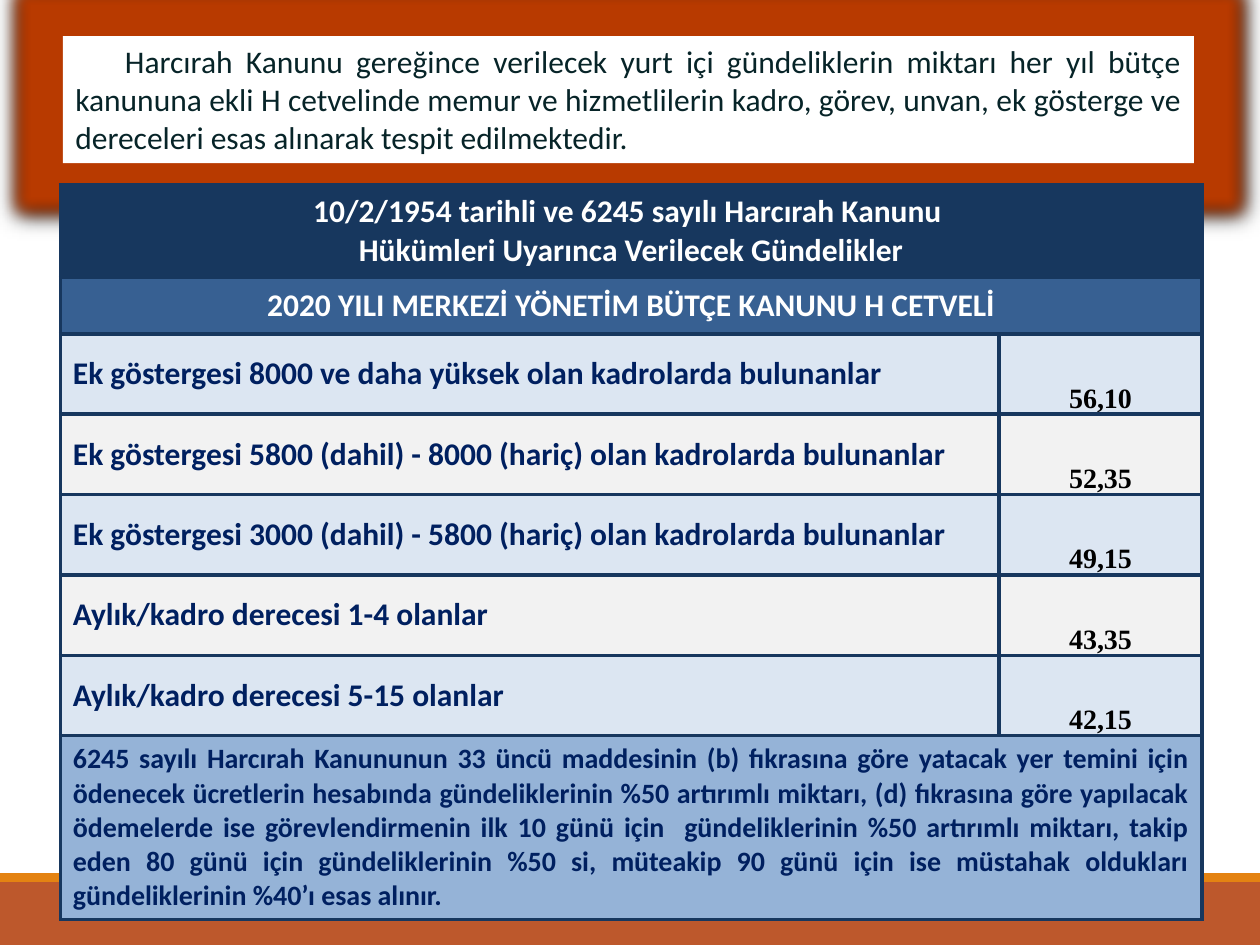
from dataclasses import dataclass

from lxml import etree
from pptx import Presentation
from pptx import util as u
from pptx.dml.color import RGBColor
from pptx.enum import shapes, text
from pptx.oxml.ns import qn

COLORS = {
    "white": "FFFFFF", "black": "000000", "ink": "072428", "text": "002060",
    "navy": "17375E", "blue": "376092", "pale": "DCE6F2", "grey": "F2F2F2",
    "note": "95B3D7", "rust": "BD582C", "orange": "E48312", "glow": "B83A00",
}
SANS, SERIF = "Calibri", "Times New Roman"
ALIGN, ANCHOR = text.PP_ALIGN, text.MSO_ANCHOR


@dataclass
class Style:
    color: str
    size: int = 18
    bold: bool = True
    font: str = SANS
    align: ALIGN = ALIGN.LEFT
    anchor: ANCHOR = ANCHOR.MIDDLE
    margins: tuple = (0.25, 0.13, 0.25, 0.13)  # left, top, right, bottom


@dataclass
class Row:
    height: float
    fill: str
    cells: list  # (wording, style); a single entry spans both columns


HEADING = Style("white", align=ALIGN.CENTER)
LABEL = Style("text")
AMOUNT = Style("black", 16, font=SERIF, align=ALIGN.CENTER,
               anchor=ANCHOR.BOTTOM, margins=(0.03, 0.03, 0.03, 0))
NOTE = Style("text", 16, align=ALIGN.JUSTIFY)
INTRO = Style("ink", bold=False, align=ALIGN.JUSTIFY)

INTRO_TEXT = (
    "Harcırah Kanunu gereğince verilecek yurt içi gündeliklerin miktarı her yıl "
    "bütçe kanununa ekli H cetvelinde memur ve hizmetlilerin kadro, görev, unvan, "
    "ek gösterge ve dereceleri esas alınarak tespit edilmektedir.")
NOTE_TEXT = (
    "6245 sayılı Harcırah Kanununun 33 üncü maddesinin (b) fıkrasına göre yatacak "
    "yer temini için ödenecek ücretlerin hesabında gündeliklerinin %50 artırımlı "
    "miktarı, (d) fıkrasına göre yapılacak ödemelerde ise görevlendirmenin ilk 10 "
    "günü için  gündeliklerinin %50 artırımlı miktarı, takip eden 80 günü için "
    "gündeliklerinin %50 si, müteakip 90 günü için ise müstahak oldukları "
    "gündeliklerinin %40’ı esas alınır.")
ALLOWANCES = [
    ("Ek göstergesi 8000 ve daha yüksek olan kadrolarda bulunanlar", "56,10"),
    ("Ek göstergesi 5800 (dahil) - 8000 (hariç) olan kadrolarda bulunanlar", "52,35"),
    ("Ek göstergesi 3000 (dahil) - 5800 (hariç) olan kadrolarda bulunanlar", "49,15"),
    ("Aylık/kadro derecesi 1-4 olanlar", "43,35"),
    ("Aylık/kadro derecesi 5-15 olanlar", "42,15"),
]
ROWS = [
    Row(1.86, "navy", [("10/2/1954 tarihli ve 6245 sayılı Harcırah Kanunu \v"
                        "Hükümleri Uyarınca Verilecek Gündelikler", HEADING)]),
    Row(1.14, "blue", [("2020 YILI MERKEZİ YÖNETİM BÜTÇE KANUNU H CETVELİ", HEADING)]),
    *[Row(1.62, ("pale", "grey")[i % 2], [(label, LABEL), (amount, AMOUNT)])
      for i, (label, amount) in enumerate(ALLOWANCES)],
    Row(3.63, "note", [(NOTE_TEXT, NOTE)]),
]
COLUMNS = (18.92, 4.09)


def rgb(name: str) -> RGBColor:
    return RGBColor.from_string(COLORS[name])


def add_element(parent, tag: str, **attrs):
    return etree.SubElement(parent, qn(tag), {k: str(v) for k, v in attrs.items()})


def write(tf, wording: str, style: Style) -> None:
    p = tf.paragraphs[0]
    p.text = wording
    p.alignment = style.align
    for r in p.runs:
        r.font.name, r.font.size, r.font.bold = style.font, u.Pt(style.size), style.bold
        r.font.color.rgb = rgb(style.color)


def add_rect(s, left: float, top: float, width: float, height: float, fill: str):
    sp = s.shapes.add_shape(shapes.MSO_SHAPE.RECTANGLE,
                            u.Cm(left), u.Cm(top), u.Cm(width), u.Cm(height))
    sp.shadow.inherit = False
    sp.fill.solid()
    sp.fill.fore_color.rgb = rgb(fill)
    sp.line.fill.background()
    return sp


def add_glow(sp) -> None:
    effects = sp._element.spPr.find(qn("a:effectLst"))
    glow = add_element(effects, "a:glow", rad=u.Pt(18))
    add_element(glow, "a:srgbClr", val=COLORS["glow"])
    shadow = add_element(effects, "a:outerShdw", blurRad=u.Pt(8.5), dist=u.Pt(1),
                         dir=5400000, algn="t", rotWithShape=0)
    add_element(shadow, "a:srgbClr", val=COLORS["black"])


def add_borders(cell) -> None:
    tcPr = cell._tc.get_or_add_tcPr()
    for side in "LRTB":
        ln = add_element(tcPr, f"a:ln{side}", w=u.Pt(2.25))
        add_element(add_element(ln, "a:solidFill"), "a:srgbClr", val=COLORS["navy"])


def add_allowance_table(s, left: float, top: float) -> None:
    table = s.shapes.add_table(
        len(ROWS), len(COLUMNS), u.Cm(left), u.Cm(top),
        u.Cm(sum(COLUMNS)), u.Cm(sum(row.height for row in ROWS))).table
    for column, width in zip(table.columns, COLUMNS):
        column.width = u.Cm(width)
    for i, row in enumerate(ROWS):
        table.rows[i].height = u.Cm(row.height)
        for cell in table.rows[i].cells:
            add_borders(cell)
            cell.fill.solid()
            cell.fill.fore_color.rgb = rgb(row.fill)
        if len(row.cells) == 1:
            table.cell(i, 0).merge(table.cell(i, 1))
        for j, (wording, style) in enumerate(row.cells):
            cell = table.cell(i, j)
            cell.vertical_anchor = style.anchor
            (cell.margin_left, cell.margin_top, cell.margin_right,
             cell.margin_bottom) = map(u.Cm, style.margins)
            write(cell.text_frame, wording, style)


def main() -> None:
    prs = Presentation()
    prs.slide_width, prs.slide_height = u.Cm(25.4), u.Cm(19.05)
    s = prs.slides.add_slide(prs.slide_layouts[6])

    # Footer bands
    add_rect(s, 0, 17.78, 25.4, 1.27, "rust")
    add_rect(s, 0, 17.6, 25.4, 0.18, "orange")

    # Introduction with glowing frame
    sp = add_rect(s, 1.27, 0.73, 22.8, 2.56, "white")
    add_glow(sp)
    tf = sp.text_frame
    tf.word_wrap = True
    tf.vertical_anchor = ANCHOR.TOP
    write(tf, INTRO_TEXT, INTRO)
    tf.paragraphs[0]._p.get_or_add_pPr().set("indent", str(u.Cm(1)))

    # Daily allowance table
    add_allowance_table(s, 1.22, 3.73)

    prs.save("out.pptx")


if __name__ == "__main__":
    main()
